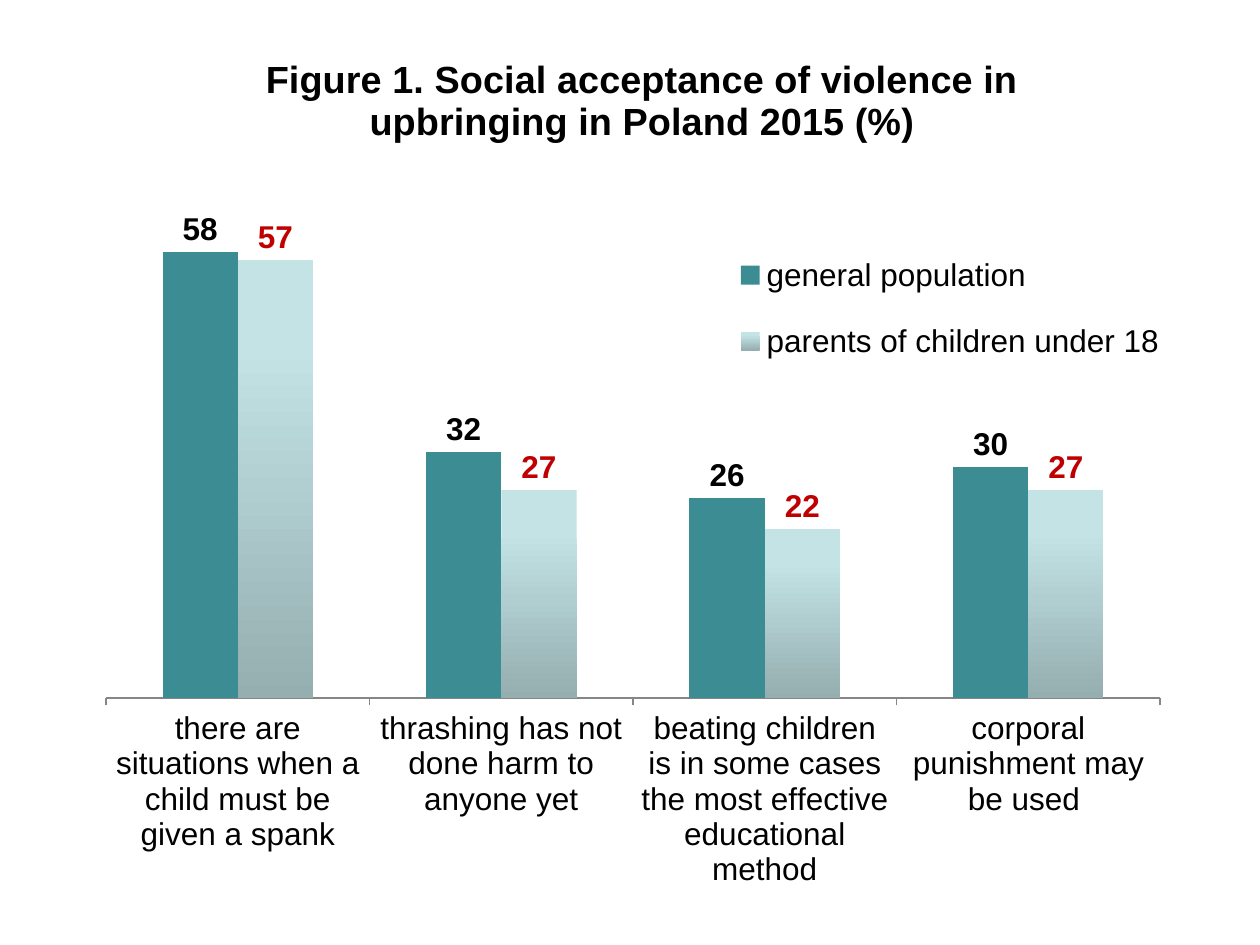
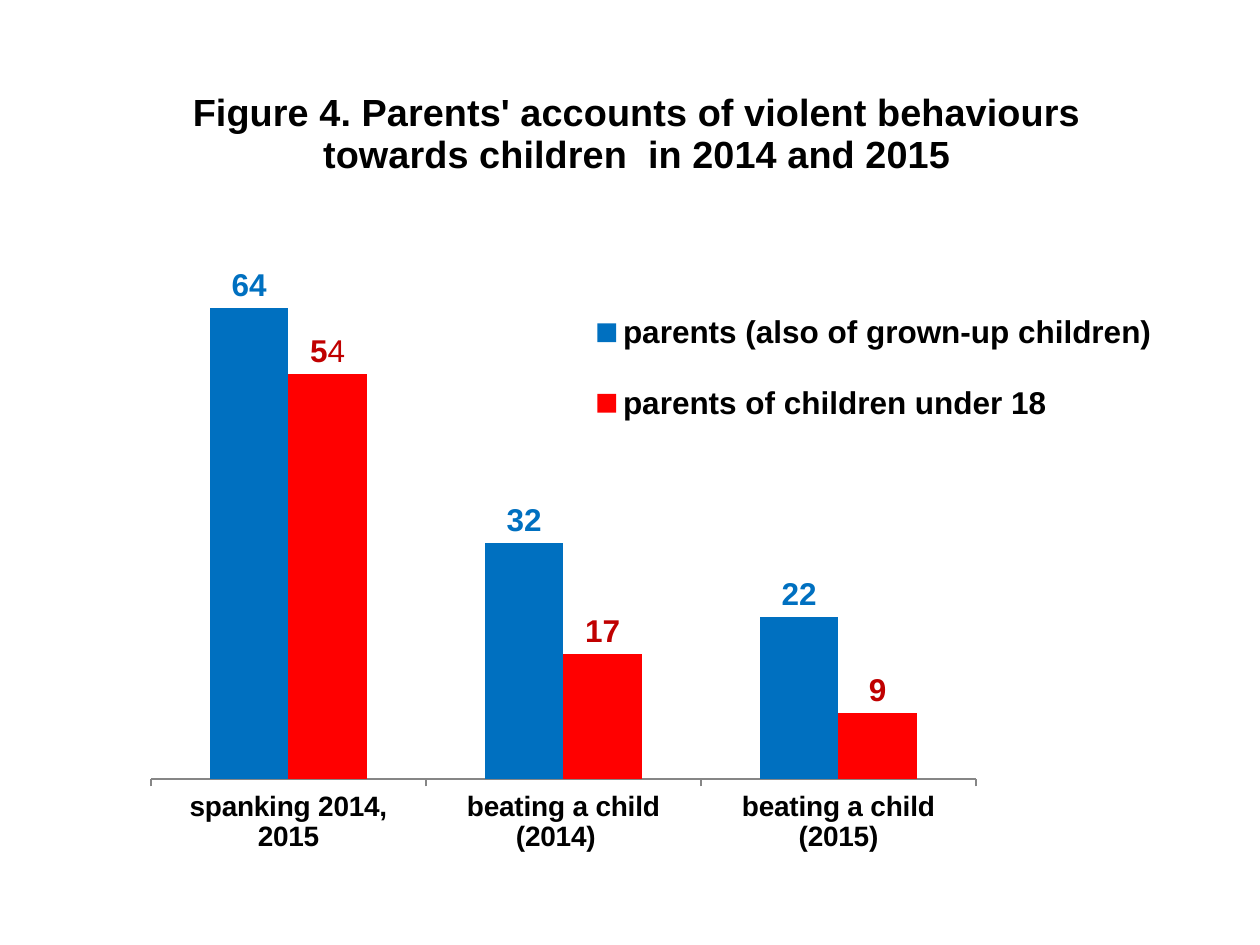
from lxml import etree
from pptx import Presentation
from pptx import util as u
from pptx.chart.data import CategoryChartData
from pptx.dml.color import RGBColor
from pptx.enum import chart as ch
from pptx.oxml import parse_xml
from pptx.oxml.ns import qn

PX = 914400 / 126
FONT = "Arial"
COLORS = {
    "black": "000000", "axis": "868686", "teal": "3C8C93",
    "pale": "C3E3E5", "pale_end": "95AEB0", "blue": "0070C0",
    "red": "FF0000", "dark_red": "C00000",
}
CHART_NS = "http://schemas.openxmlformats.org/drawingml/2006/chart"


def style_font(font, size, color, bold=False):
    font.name = FONT
    font.size = u.Pt(size)
    font.bold = bold
    font.color.rgb = RGBColor.from_string(COLORS[color])


def place(part, frame, box, inner=False):
    left, top, width, height = frame
    layout = part.find(qn("c:layout"))
    if layout is None:
        layout = parse_xml(f'<c:layout xmlns:c="{CHART_NS}"/>')
        before = part.find(qn("c:tx"))
        if before is None:
            before = part.find(qn("c:legendPos"))
        if before is None:
            part.insert(0, layout)
        else:
            before.addnext(layout)
    for child in list(layout):
        layout.remove(child)
    manual = etree.SubElement(layout, qn("c:manualLayout"))
    settings = [("layoutTarget", "inner")] if inner else []
    settings += [("xMode", "edge"), ("yMode", "edge")]
    fractions = ((box[0] - left) / width, (box[1] - top) / height,
                 *(size / whole for size, whole in zip(box[2:], (width, height))))
    settings += [(key, f"{value:.4f}") for key, value in zip("xywh", fractions)]
    for key, value in settings:
        etree.SubElement(manual, qn(f"c:{key}")).set("val", value)


figures = [
    {
        "title": "Figure 1. Social acceptance of violence in upbringing in Poland 2015 (%)",
        "frame": (34, 16, 1201, 903),
        "title_at": (259, 48),
        "plot": (106, 160, 1054, 538),
        "legend": (735, 227, 430, 162),
        "bold": False,
        "category_size": 18,
        "categories": [
            "there are situations when a child must be given a spank",
            "thrashing has not done harm to anyone yet",
            "beating children is in some cases the most effective educational method",
            "corporal punishment may be used ",
        ],
        "groups": [
            ("general population", (58, 32, 26, 30), "teal", None, "black"),
            ("parents of children under 18", (57, 27, 22, 27), "pale", "pale_end", "dark_red"),
        ],
    },
    {
        "title": "Figure 4. Parents' accounts of violent behaviours towards children  in 2014 and 2015",
        "frame": (35, 45, 1191, 824),
        "title_at": (186, 81),
        "plot": (151, 264, 825, 515),
        "legend": (591, 280, 567, 176),
        "bold": True,
        "category_size": 16,
        "categories": ["spanking 2014, 2015", "beating a child (2014)  ", "beating a child (2015)"],
        "groups": [
            ("parents (also of grown-up children)", (64, 32, 22), "blue", None, "blue"),
            ("parents of children under 18", (55, 17, 9), "red", None, "dark_red"),
        ],
    },
]

deck = Presentation()
deck.slide_width, deck.slide_height = u.Inches(10), u.Inches(7.5)

for figure in figures:
    slide = deck.slides.add_slide(deck.slide_layouts[6])
    survey = CategoryChartData()
    survey.categories = figure["categories"]
    for name, shares, *_ in figure["groups"]:
        survey.add_series(name, shares)
    frame = figure["frame"]
    chart = slide.shapes.add_chart(
        ch.XL_CHART_TYPE.COLUMN_CLUSTERED, *(round(px * PX) for px in frame), survey).chart
    style_font(chart.font, 18, "black")

    title = chart.chart_title
    title.include_in_layout = False
    heading = title.text_frame.paragraphs[0].add_run()
    heading.text = figure["title"]
    style_font(heading.font, 21.6, "black", True)
    place(chart._chartSpace.chart.find(qn("c:title")), frame, figure["title_at"])

    chart.has_legend = True
    chart.legend.position = ch.XL_LEGEND_POSITION.RIGHT
    chart.legend.include_in_layout = False
    style_font(chart.legend.font, 18, "black", figure["bold"])
    place(chart._chartSpace.chart.find(qn("c:legend")), frame, figure["legend"])
    place(chart._chartSpace.chart.plotArea, frame, figure["plot"], inner=True)

    share_axis = chart.value_axis
    share_axis.minimum_scale, share_axis.maximum_scale = 0, 70
    share_axis.has_major_gridlines = False
    share_axis.visible = False
    opinion_axis = chart.category_axis
    opinion_axis.major_tick_mark = ch.XL_TICK_MARK.OUTSIDE
    opinion_axis.format.line.color.rgb = RGBColor.from_string(COLORS["axis"])
    opinion_axis.format.line.width = u.Pt(0.75)
    style_font(opinion_axis.tick_labels.font, figure["category_size"], "black", figure["bold"])

    columns = chart.plots[0]
    columns.gap_width, columns.overlap = 150, 0
    columns.vary_by_categories = False
    for group, (_, _, color, end_color, label_color) in zip(columns.series, figure["groups"]):
        group.invert_if_negative = False
        fill = group.format.fill
        if end_color:
            fill.gradient()
            fill.gradient_angle = 270
            for stop, position, shade in zip(fill.gradient_stops, (0.2, 1), (color, end_color)):
                stop.position = position
                stop.color.rgb = RGBColor.from_string(COLORS[shade])
        else:
            fill.solid()
            fill.fore_color.rgb = RGBColor.from_string(COLORS[color])
        labels = group.data_labels
        labels.show_value = True
        labels.position = ch.XL_LABEL_POSITION.OUTSIDE_END
        style_font(labels.font, 18, label_color, True)

spanking_label = columns.series[1].points[0].data_label
spanking_text = spanking_label.text_frame.paragraphs[0]
for digit, bold in (("5", True), ("4", False)):
    run = spanking_text.add_run()
    run.text = digit
    style_font(run.font, 18, "dark_red", bold)
spanking_label.position = ch.XL_LABEL_POSITION.OUTSIDE_END

deck.save("out.pptx")
